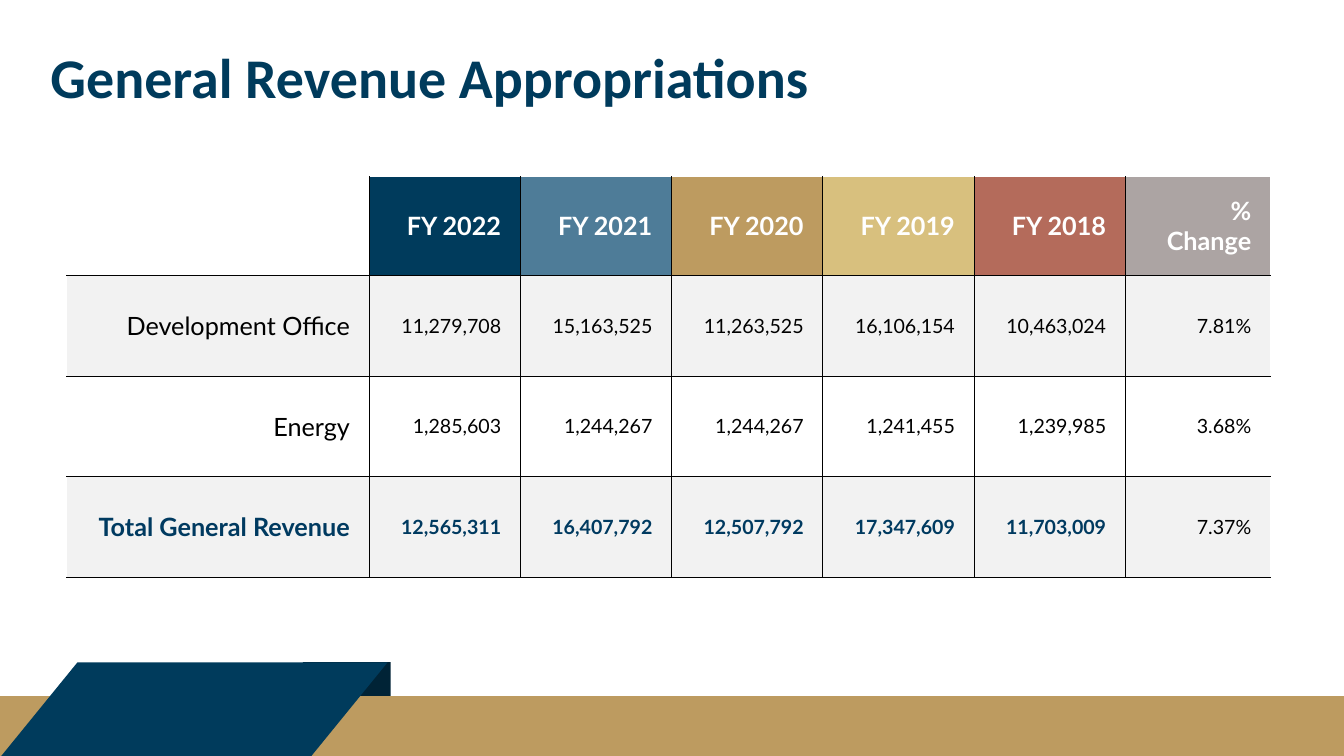
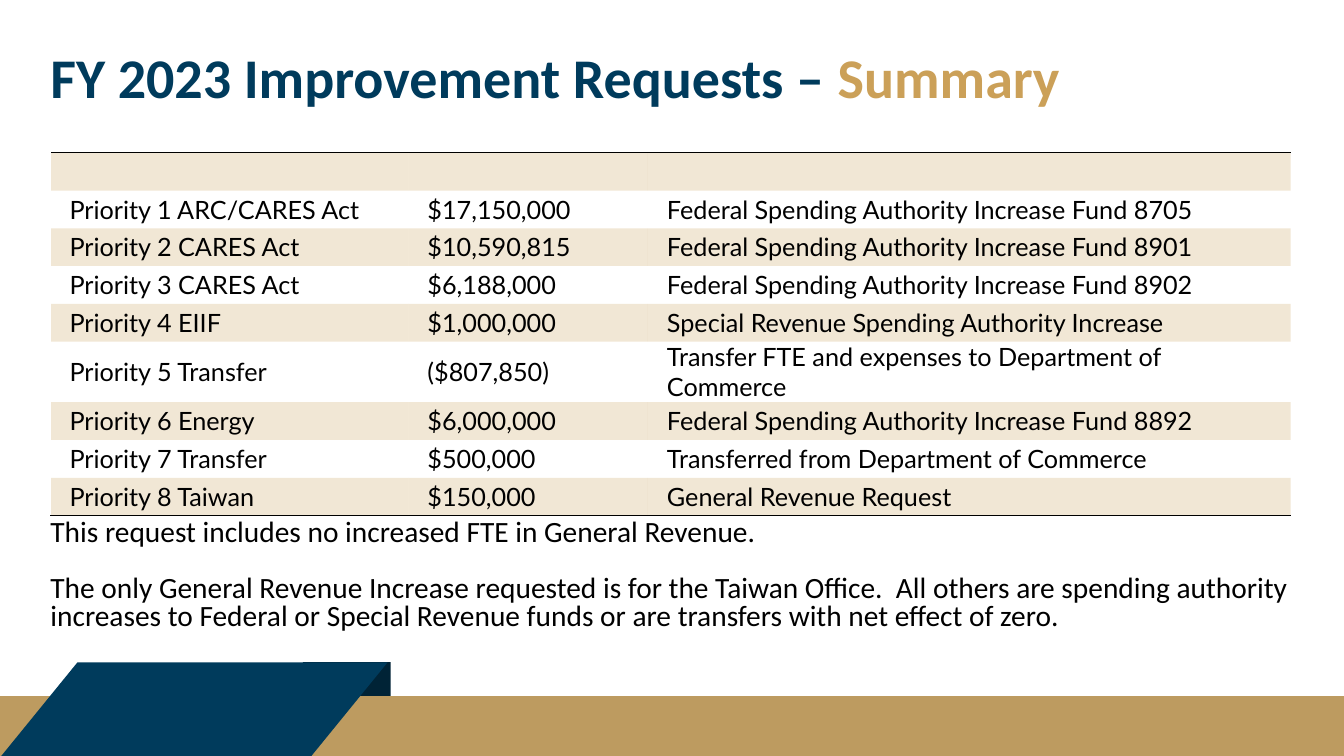
import dataclasses

import lxml.etree
import pptx
import pptx.dml.color
import pptx.enum.shapes
import pptx.enum.text
import pptx.oxml.ns
import pptx.util

Inches = pptx.util.Inches
Pt = pptx.util.Pt
qn = pptx.oxml.ns.qn
ALIGN = pptx.enum.text.PP_ALIGN
SHAPES = pptx.enum.shapes.MSO_SHAPE


@dataclasses.dataclass(frozen=True)
class Theme:
    navy: str = "003B5C"
    fold: str = "002336"
    gold: str = "BD9B60"
    bright_gold: str = "CBA058"
    total: str = "003A60"
    stripe: str = "F2F2F2"
    black: str = "000000"
    white: str = "FFFFFF"
    years: tuple = ("003B5C", "4E7C98", "BD9B60", "D8C07E", "B46B5B", "ACA4A3")
    text_font: str = "Calibri"
    table_font: str = "Lato"
    title_size: int = 80
    body_size: int = 42
    label_size: int = 36
    figure_size: int = 28
    inset: float = 0.38


THEME = Theme()

REVENUE_ROWS = (
    ("", "FY 2022", "FY 2021", "FY 2020", "FY 2019", "FY 2018", "% Change"),
    ("Development Office", "11,279,708", "15,163,525", "11,263,525",
     "16,106,154", "10,463,024", "7.81%"),
    ("Energy", "1,285,603", "1,244,267", "1,244,267", "1,241,455",
     "1,239,985", "3.68%"),
    ("Total General Revenue", "12,565,311", "16,407,792", "12,507,792",
     "17,347,609", "11,703,009", "7.37%"),
)

REQUEST_ROWS = (
    ("", "", ""),
    ("Priority 1 ARC/CARES Act", "$17,150,000", "Federal Spending Authority Increase Fund 8705"),
    ("Priority 2 CARES Act", "$10,590,815", "Federal Spending Authority Increase Fund 8901"),
    ("Priority 3 CARES Act", "$6,188,000", "Federal Spending Authority Increase Fund 8902"),
    ("Priority 4 EIIF", "$1,000,000", "Special Revenue Spending Authority Increase"),
    ("Priority 5 Transfer", "($807,850)", "Transfer FTE and expenses to Department of Commerce"),
    ("Priority 6 Energy", "$6,000,000", "Federal Spending Authority Increase Fund 8892"),
    ("Priority 7 Transfer", "$500,000", "Transferred from Department of Commerce"),
    ("Priority 8 Taiwan", "$150,000", "General Revenue Request"),
)

REQUEST_NOTES = (
    "This request includes no increased FTE in General Revenue.",
    "The only General Revenue Increase requested is for the Taiwan Office.  All others are "
    "spending authority increases to Federal or Special Revenue funds or are transfers with "
    "net effect of zero.",
)


def rgb(color):
    return pptx.dml.color.RGBColor.from_string(color)


def format_run(run, font, size, color, bold=False):
    run.font.name = font
    run.font.size = Pt(size)
    run.font.color.rgb = rgb(color)
    run.font.bold = bold


def add_block(slide, kind, left, top, width, height, color):
    shape = slide.shapes.add_shape(
        kind, Inches(left), Inches(top), Inches(width), Inches(height))
    shape.shadow.inherit = False
    shape.fill.solid()
    shape.fill.fore_color.rgb = rgb(color)
    shape.line.fill.background()


def add_footer(slide):
    add_block(slide, SHAPES.RECTANGLE, 6.01, 13.14, 1.74, 1.86, THEME.fold)
    add_block(slide, SHAPES.RECTANGLE, 0, 13.81, 26.66, 1.19, THEME.gold)
    add_block(slide, SHAPES.FLOWCHART_DATA, 0, 13.14, 7.69, 1.89, THEME.navy)


def add_text_frame(slide, top, height):
    box = slide.shapes.add_textbox(Inches(1), Inches(top), Inches(24.81), Inches(height))
    frame = box.text_frame
    frame.word_wrap = True
    frame.margin_left = frame.margin_right = frame.margin_top = frame.margin_bottom = 0
    return frame


def add_title(slide, *parts):
    paragraph = add_text_frame(slide, 1, 1.5).paragraphs[0]
    paragraph.line_spacing = 0.9
    for text, color in parts:
        run = paragraph.add_run()
        run.text = text
        format_run(run, THEME.text_font, THEME.title_size, color, True)


def add_notes_text(slide, texts):
    frame = add_text_frame(slide, 10.32, 2.42)
    for index, text in enumerate(texts):
        paragraph = frame.add_paragraph() if index else frame.paragraphs[0]
        paragraph.text = text
        paragraph.line_spacing = 0.8
        paragraph.space_before = Pt(30 if index else 0)
        paragraph.space_after = Pt(9)
        format_run(paragraph.runs[0], THEME.text_font, THEME.body_size, THEME.black)


def add_table(slide, left, top, widths, heights):
    frame = slide.shapes.add_table(
        len(heights), len(widths), Inches(left), Inches(top),
        Inches(sum(widths)), Inches(sum(heights)))
    table = frame.table
    table.first_row = False
    table.horz_banding = False
    for column, width in zip(table.columns, widths):
        column.width = Inches(width)
    for row, height in zip(table.rows, heights):
        row.height = Inches(height)
    return table


def set_borders(cell, **colors):
    properties = cell._tc.get_or_add_tcPr()
    for side in ("L", "R", "T", "B"):
        line = lxml.etree.SubElement(properties, qn(f"a:ln{side}"), w=str(Pt(1)))
        color = colors.get(side)
        if color:
            fill = lxml.etree.SubElement(line, qn("a:solidFill"))
            lxml.etree.SubElement(fill, qn("a:srgbClr"), val=color)
        else:
            lxml.etree.SubElement(line, qn("a:noFill"))


def fill_cell(cell, color, opacity=100):
    cell.fill.solid()
    cell.fill.fore_color.rgb = rgb(color)
    if opacity < 100:
        for element in cell._tc.tcPr.findall(f"{qn('a:solidFill')}/{qn('a:srgbClr')}"):
            lxml.etree.SubElement(element, qn("a:alpha"), val=str(opacity * 1000))


def write_cell(cell, text, size, color, bold, align, vertical_inset):
    cell.vertical_anchor = pptx.enum.text.MSO_ANCHOR.MIDDLE
    cell.margin_left = cell.margin_right = Inches(THEME.inset)
    cell.margin_top = cell.margin_bottom = Inches(vertical_inset)
    if text:
        cell.text_frame.text = text
        paragraph = cell.text_frame.paragraphs[0]
        paragraph.alignment = align
        format_run(paragraph.runs[0], THEME.table_font, size, color, bold)


def add_revenue_table(slide):
    table = add_table(slide, 1.32, 3.5, [6] + [3] * 5 + [2.88], [1.29, 2, 2, 2])
    last_row, last_column = len(REVENUE_ROWS) - 1, len(REVENUE_ROWS[0]) - 1
    for row, values in enumerate(REVENUE_ROWS):
        for column, text in enumerate(values):
            cell = table.cell(row, column)
            is_total = row == last_row and column < last_column
            if row == 0:
                background = THEME.years[column - 1] if column else THEME.white
                color = THEME.white
            else:
                background = THEME.stripe if row % 2 else THEME.white
                color = THEME.total if is_total else THEME.black
            set_borders(
                cell,
                L=THEME.black if column else THEME.white,
                R=THEME.black if column < last_column else THEME.white,
                T=THEME.black if row else THEME.white,
                B=THEME.black)
            fill_cell(cell, background)
            size = THEME.figure_size if row and column else THEME.label_size
            write_cell(cell, text, size, color, row == 0 or is_total,
                       ALIGN.RIGHT, THEME.inset)


def add_request_table(slide):
    table = add_table(slide, 1, 3.03, [7.1, 4.75, 12.75], [0.75] * len(REQUEST_ROWS))
    last_row = len(REQUEST_ROWS) - 1
    for row, values in enumerate(REQUEST_ROWS):
        for column, text in enumerate(values):
            cell = table.cell(row, column)
            set_borders(
                cell,
                L=None if column else THEME.white,
                T=None if row else THEME.black,
                B=THEME.black if row == last_row else None)
            if row % 2:
                fill_cell(cell, THEME.white)
            else:
                fill_cell(cell, THEME.bright_gold, 25)
            write_cell(cell, text, THEME.label_size, THEME.black, False, ALIGN.LEFT, 0)


def add_slide(presentation, *title_parts):
    slide = presentation.slides.add_slide(presentation.slide_layouts[6])
    add_footer(slide)
    add_title(slide, *title_parts)
    return slide


def main():
    presentation = pptx.Presentation()
    presentation.slide_width = Inches(26.66)
    presentation.slide_height = Inches(15)

    slide = add_slide(presentation, ("General Revenue Appropriations", THEME.navy))
    add_revenue_table(slide)

    slide = add_slide(
        presentation,
        ("FY 2023 Improvement Requests – ", THEME.navy),
        ("Summary", THEME.bright_gold))
    add_notes_text(slide, REQUEST_NOTES)
    add_request_table(slide)

    presentation.save("out.pptx")


if __name__ == "__main__":
    main()
